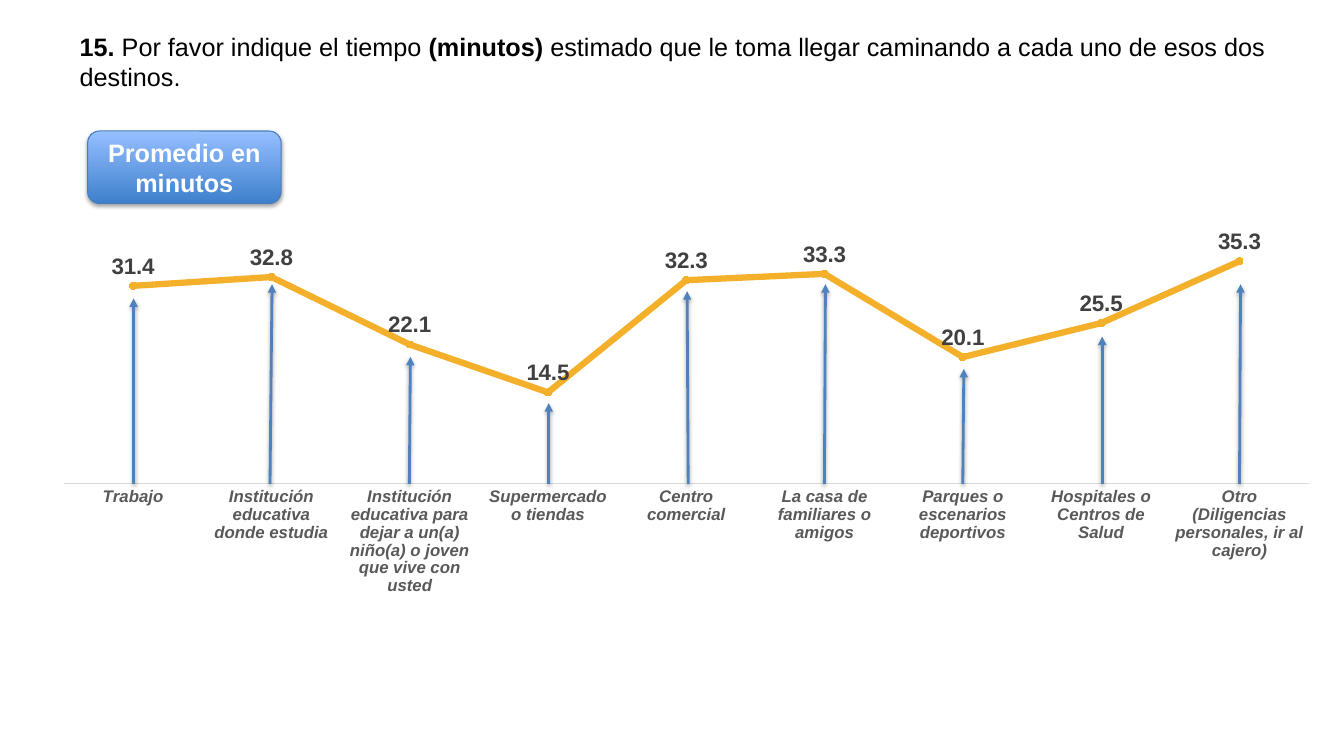
from lxml import etree
from pptx import Presentation
from pptx import util as u
from pptx.chart.data import CategoryChartData
from pptx.dml.color import RGBColor
from pptx.enum import chart as charts, shapes, text
from pptx.oxml import ns

WIDTH, HEIGHT = u.Inches(13.33), u.Inches(7.5)
COLUMN, ROW = WIDTH / 100, HEIGHT / 100
FONT = "Arial"
COLORS = {
    "title": "000000", "label": "404040", "category": "595959",
    "axis": "D9D9D9", "series": "F5B02B", "arrow": "4F81BD",
    "badge_dark": "3E7FCD", "badge_light": "96C0FF",
    "badge_line": "4A7DBA", "badge_text": "FFFFFF", "shadow": "000000",
}
QUESTION = [
    ("15. ", True),
    ("Por favor indique el tiempo ", False),
    ("(minutos)", True),
    (" estimado que le toma llegar caminando a cada uno de esos dos destinos.", False),
]
# destination, minutes, row of the arrow tip, columns the arrow foot is off its tip
DESTINATIONS = [
    ("Trabajo", 31.4, 39.47, 0),
    ("Institución educativa donde estudia", 32.8, 37.6, -0.15),
    ("Institución educativa para dejar a un(a) niño(a) o joven que vive con usted",
     22.1, 47.2, -0.08),
    ("Supermercado o tiendas", 14.5, 53.33, 0),
    ("Centro comercial", 32.3, 38.53, 0.08),
    ("La casa de familiares o amigos", 33.3, 37.6, -0.08),
    ("Parques o escenarios deportivos", 20.1, 48.8, -0.08),
    ("Hospitales o Centros de Salud", 25.5, 44.53, 0),
    ("Otro (Diligencias personales, ir al cajero)", 35.3, 37.6, -0.08),
]
PLOT = {"x": 0, "y": 0.305, "w": 0.997, "h": 0.422}


def color(name):
    return RGBColor.from_string(COLORS[name])


def grid(left, top, width, height):
    """Turn columns and rows into lengths."""
    return (u.Emu(round(left * COLUMN)), u.Emu(round(top * ROW)),
            u.Emu(round(width * COLUMN)), u.Emu(round(height * ROW)))


def format_font(font, color_name, **values):
    for name, value in {"name": FONT, **values}.items():
        setattr(font, name, value)
    font.color.rgb = color(color_name)


def format_line(line, color_name, width):
    line.color.rgb = color(color_name)
    line.width = u.Pt(width)


def add_child(parent, tag, **attributes):
    child = etree.SubElement(parent, ns.qn(tag))
    for name, value in attributes.items():
        child.set(name, str(value))
    return child


def add_shadow(shape, opacity, distance):
    """Cast a soft shadow downwards; the line must be set before."""
    effects = add_child(shape._element.spPr, "a:effectLst")
    shadow = add_child(effects, "a:outerShdw", blurRad=u.Pt(3.1), dist=u.Pt(distance),
                       dir=5400000, rotWithShape=0)
    tint = add_child(shadow, "a:srgbClr", val=COLORS["shadow"])
    add_child(tint, "a:alpha", val=opacity * 1000)


def add_question(slide, box):
    title = slide.shapes.title
    title.left, title.top, title.width, title.height = box
    frame = title.text_frame
    settings = {"word_wrap": True, "auto_size": text.MSO_AUTO_SIZE.NONE,
                "vertical_anchor": text.MSO_ANCHOR.TOP}
    for name, value in settings.items():
        setattr(frame, name, value)
    paragraph = frame.paragraphs[0]
    paragraph.alignment = text.PP_ALIGN.LEFT
    for words, bold in QUESTION:
        run = paragraph.add_run()
        run.text = words
        format_font(run.font, "title", size=u.Pt(18), bold=bold)


def place_plot(chart):
    plot_area = chart._chartSpace.chart.plotArea
    for old in plot_area.findall(ns.qn("c:layout")):
        plot_area.remove(old)
    layout = etree.Element(ns.qn("c:layout"))
    plot_area.insert(0, layout)
    manual = add_child(layout, "c:manualLayout")
    add_child(manual, "c:layoutTarget", val="inner")
    for side in "xy":
        add_child(manual, f"c:{side}Mode", val="edge")
    for side, share in PLOT.items():
        add_child(manual, f"c:{side}", val=share)


def add_minutes_chart(slide, box):
    data = CategoryChartData(number_format="0.0")
    data.categories = [name for name, *_ in DESTINATIONS]
    data.add_series("Promedio en minutos", [minutes for _, minutes, *_ in DESTINATIONS])
    chart = slide.shapes.add_chart(charts.XL_CHART_TYPE.LINE_MARKERS, *box, data).chart
    chart.has_legend = chart.has_title = False
    format_font(chart.font, "title", size=u.Pt(10))
    place_plot(chart)

    values = chart.value_axis
    settings = {"minimum_scale": 0, "maximum_scale": 40,
                "has_major_gridlines": False, "visible": False}
    for name, value in settings.items():
        setattr(values, name, value)
    categories = chart.category_axis
    categories.major_tick_mark = categories.minor_tick_mark = charts.XL_TICK_MARK.NONE
    format_line(categories.format.line, "axis", 0.75)
    format_font(categories.tick_labels.font, "category", size=u.Pt(12),
                bold=True, italic=True)

    plot = chart.plots[0]
    plot.vary_by_categories = False
    series = plot.series[0]
    series.smooth = False
    format_line(series.format.line, "series", 4.5)
    marker = series.marker
    marker.style, marker.size = charts.XL_MARKER_STYLE.CIRCLE, 5
    marker.format.fill.solid()
    marker.format.fill.fore_color.rgb = color("series")
    format_line(marker.format.line, "series", 0.75)
    labels = series.data_labels
    settings = {"show_value": True, "position": charts.XL_LABEL_POSITION.ABOVE,
                "number_format": "0.0", "number_format_is_linked": False}
    for name, value in settings.items():
        setattr(labels, name, value)
    format_font(labels.font, "label", size=u.Pt(16), bold=True)


def add_arrows(slide, box):
    """Point from the axis of the chart in the box up to each value."""
    left, top, width, height = box
    step = width * PLOT["w"] / len(DESTINATIONS)
    foot_y = round(top + height * (PLOT["y"] + PLOT["h"]))
    for index, (_, _, tip_row, lean) in enumerate(DESTINATIONS):
        tip_x = left + step * (index + 0.5) + 0.08 * COLUMN
        arrow = slide.shapes.add_connector(
            shapes.MSO_CONNECTOR.STRAIGHT, round(tip_x + lean * COLUMN), foot_y,
            round(tip_x), round(tip_row * ROW))
        format_line(arrow.line, "arrow", 2)
        add_child(arrow.line._get_or_add_ln(), "a:tailEnd", type="triangle")
        add_shadow(arrow, 37, 1.6)


def add_badge(slide, box):
    badge = slide.shapes.add_shape(shapes.MSO_SHAPE.ROUNDED_RECTANGLE, *box)
    badge.fill.gradient()
    badge.fill.gradient_angle = 90
    for stop, position, name in zip(badge.fill.gradient_stops, (0, 1),
                                    ("badge_dark", "badge_light")):
        stop.position = position
        stop.color.rgb = color(name)
    format_line(badge.line, "badge_line", 0.75)
    add_shadow(badge, 35, 1.8)
    frame = badge.text_frame
    frame.word_wrap = True
    frame.vertical_anchor = text.MSO_ANCHOR.MIDDLE
    paragraph = frame.paragraphs[0]
    paragraph.alignment = text.PP_ALIGN.CENTER
    run = paragraph.add_run()
    run.text = "Promedio en minutos"
    format_font(run.font, "badge_text", size=u.Pt(18), bold=True)


def main():
    presentation = Presentation()
    presentation.slide_width, presentation.slide_height = WIDTH, HEIGHT
    slide = presentation.slides.add_slide(presentation.slide_layouts[5])
    chart_box = grid(4.72, 6.53, 92.93, 79.07)
    add_question(slide, grid(5.18, 3.47, 92.1, 9.47))
    add_minutes_chart(slide, chart_box)
    add_arrows(slide, chart_box)
    add_badge(slide, grid(6.52, 17.33, 14.4, 9.6))
    presentation.save("out.pptx")


if __name__ == "__main__":
    main()
